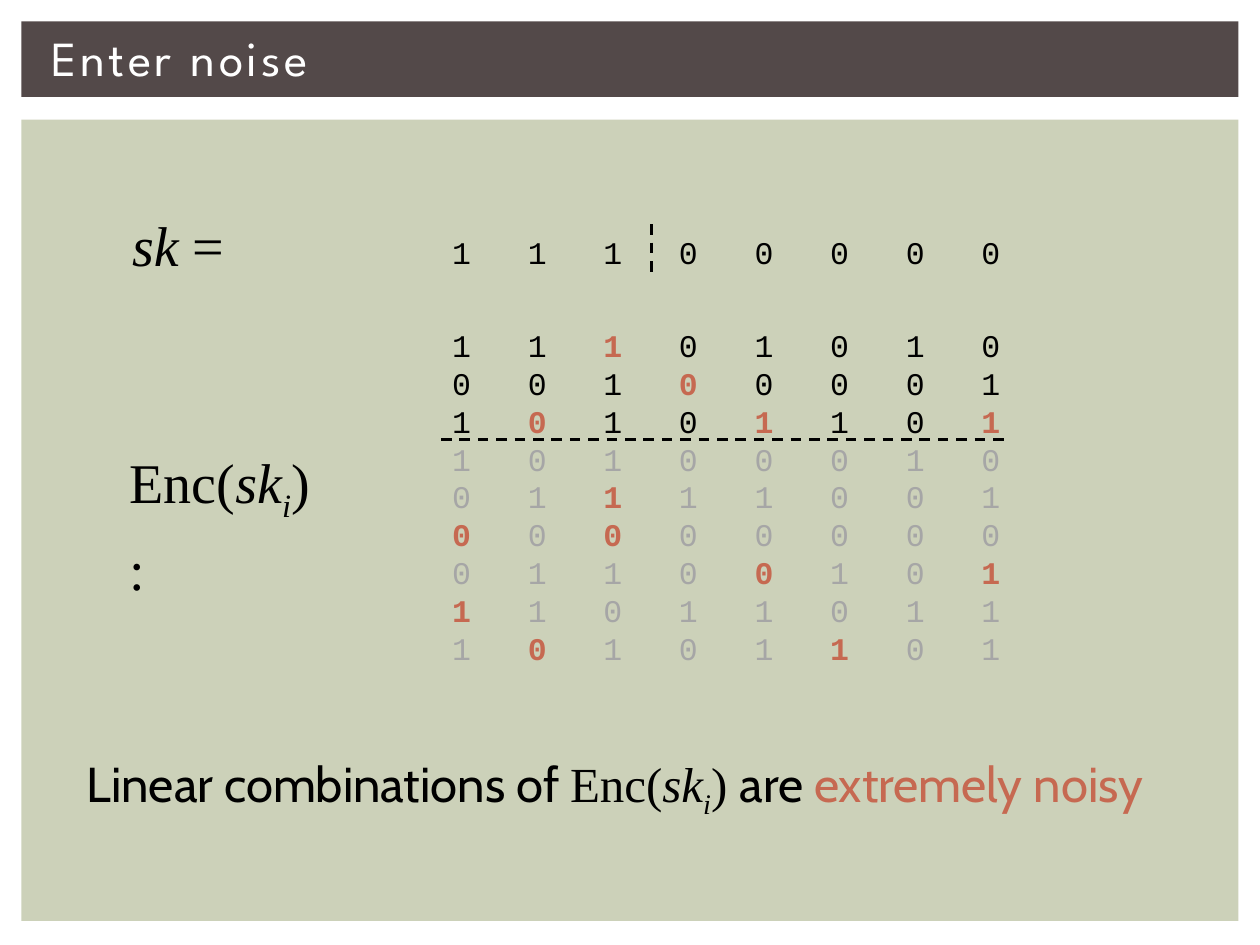
from dataclasses import dataclass

from lxml import etree
from pptx import Presentation
from pptx.dml.color import RGBColor
from pptx.enum.dml import MSO_LINE
from pptx.enum.shapes import MSO_CONNECTOR, MSO_SHAPE
from pptx.enum.text import MSO_ANCHOR
from pptx.oxml.ns import qn
from pptx.slide import Slide
from pptx.text.text import TextFrame, _Paragraph
from pptx.util import Inches, Pt

DASH = MSO_LINE.DASH
STRAIGHT = MSO_CONNECTOR.STRAIGHT
RECT = MSO_SHAPE.RECTANGLE
MIDDLE = MSO_ANCHOR.MIDDLE


@dataclass(frozen=True)
class Theme:
    panel: str = "CCD1B9"
    band: str = "534949"
    white: str = "FFFFFF"
    ink: str = "000000"
    faded: str = "A6A6A6"
    noise: str = "C66951"
    head: str = "League Spartan"
    body: str = "Cabin"
    math: str = "Times New Roman"
    code: str = "Courier New"
    large: int = 32
    medium: int = 28
    small: int = 18
    pitch: float = 21.6


@dataclass(frozen=True)
class Box:
    left: float
    top: float
    width: float
    height: float


@dataclass(frozen=True)
class Part:
    """A stretch of text; empty fields follow the paragraph."""
    text: str
    face: str | None = None
    color: str | None = None
    italic: bool | None = None
    bold: bool | None = None
    sub: bool = False


THEME = Theme()
STEP = 0.6
KEY = "1 1 1 0 0 0 0 0"
# A star marks a bit flipped by noise.
CODE_ROWS = [
    "1 1 1* 0 1 0 1 0",
    "0 0 1 0* 0 0 0 1",
    "1 0* 1 0 1* 1 0 1*",
    "1 0 1 0 0 0 1 0",
    "0 1 1* 1 1 0 0 1",
    "0* 0 0* 0 0 0 0 0",
    "0 1 1 0 0* 1 0 1*",
    "1* 1 0 1 1 0 1 1",
    "1 0* 1 0 1 1* 0 1",
]
CLEAR_ROWS = 3
SECRET = [Part("sk", THEME.math, italic=True),
          Part("i", THEME.math, italic=True, sub=True)]


def add_panel(slide: Slide, box: Box, color: str) -> None:
    shape = slide.shapes.add_shape(RECT, Inches(box.left), Inches(box.top),
                                   Inches(box.width), Inches(box.height))
    shape.shadow.inherit = False
    shape.fill.solid()
    shape.fill.fore_color.rgb = RGBColor.from_string(color)
    shape.line.fill.background()


def add_frame(slide: Slide, box: Box, wrap: bool = True) -> TextFrame:
    frame = slide.shapes.add_textbox(Inches(box.left), Inches(box.top),
                                     Inches(box.width), Inches(box.height)).text_frame
    frame.word_wrap = wrap
    return frame


def set_font(para: _Paragraph, face: str, size: int, color: str) -> None:
    para.font.name = face
    para.font.size = Pt(size)
    para.font.color.rgb = RGBColor.from_string(color)


def add_parts(para: _Paragraph, parts: list[Part]) -> None:
    for part in parts:
        run = para.add_run()
        run.text = part.text
        run.font.name = part.face
        run.font.italic = part.italic
        run.font.bold = part.bold
        if part.color:
            run.font.color.rgb = RGBColor.from_string(part.color)
        if part.sub:
            run.font._element.set("baseline", "-25000")


def add_bits(slide: Slide, box: Box, rows: list[str]) -> None:
    """Write rows of bits on even tab stops, fading those past the clear ones."""
    frame = add_frame(slide, box)
    frame.margin_top = Inches(0.08)
    for index, row in enumerate(rows):
        para = frame.paragraphs[0] if index == 0 else frame.add_paragraph()
        bits = row.split()
        tabs = etree.SubElement(para._p.get_or_add_pPr(), qn("a:tabLst"))
        for stop in range(1, len(bits)):
            etree.SubElement(tabs, qn("a:tab"), pos=str(Inches(stop * STEP)), algn="l")
        para.line_spacing = Pt(THEME.pitch)
        set_font(para, THEME.code, THEME.small,
                 THEME.ink if index < CLEAR_ROWS else THEME.faded)
        for place, bit in enumerate(bits):
            noisy = bit.endswith("*")
            text = ("\t" if place else "") + bit[0]
            add_parts(para, [Part(text, color=THEME.noise if noisy else None,
                                  bold=noisy or None)])


def add_dash(slide: Slide, left: float, top: float, right: float, bottom: float) -> None:
    line = slide.shapes.add_connector(STRAIGHT, Inches(left), Inches(top),
                                      Inches(right), Inches(bottom))
    line.line.color.rgb = RGBColor.from_string(THEME.ink)
    line.line.width = Pt(1.5)
    line.line.dash_style = DASH
    etree.SubElement(line._element.spPr, qn("a:effectLst"))


def add_title(slide: Slide) -> None:
    frame = add_frame(slide, Box(0.31, 0.16, 9.4, 0.59))
    frame.vertical_anchor = MIDDLE
    para = frame.paragraphs[0]
    set_font(para, THEME.head, THEME.medium, THEME.white)
    add_parts(para, [Part("Enter noise")])
    para.runs[0].font._element.set("spc", "200")


def add_labels(slide: Slide) -> None:
    key = add_frame(slide, Box(0.95, 1.62, 1, 0.64), wrap=False).paragraphs[0]
    set_font(key, THEME.math, THEME.large, THEME.ink)
    add_parts(key, [Part("sk ", italic=True), Part("=")])

    frame = add_frame(slide, Box(0.93, 3.5, 1.74, 0.64), wrap=False)
    code, colon = frame.paragraphs[0], frame.add_paragraph()
    colon.space_before = Pt(6)
    for para in (code, colon):
        set_font(para, THEME.math, THEME.large, THEME.ink)
    add_parts(code, [Part("Enc("), *SECRET, Part(")")])
    add_parts(colon, [Part(":")])


def add_claim(slide: Slide) -> None:
    para = add_frame(slide, Box(0.59, 5.93, 8.77, 0.57), wrap=False).paragraphs[0]
    set_font(para, THEME.body, THEME.medium, THEME.ink)
    add_parts(para, [Part("Linear combinations of "), Part("Enc(", THEME.math),
                     *SECRET, Part(") ", THEME.math), Part("are "),
                     Part("extremely noisy", color=THEME.noise)])


def main() -> None:
    deck = Presentation()
    deck.slide_width, deck.slide_height = Inches(10), Inches(7.5)
    slide = deck.slides.add_slide(deck.slide_layouts[6])
    add_panel(slide, Box(0.17, 0.95, 9.66, 6.36), THEME.panel)
    add_panel(slide, Box(0.17, 0.17, 9.66, 0.6), THEME.band)
    add_title(slide)
    add_labels(slide)
    add_bits(slide, Box(3.49, 1.77, 4.82, 0.4), [KEY])
    add_dash(slide, 5.17, 1.78, 5.17, 2.16)
    add_bits(slide, Box(3.49, 2.51, 4.82, 2.83), CODE_ROWS)
    add_dash(slide, 3.5, 3.49, 7.99, 3.49)
    add_claim(slide)
    deck.save("out.pptx")


if __name__ == "__main__":
    main()
